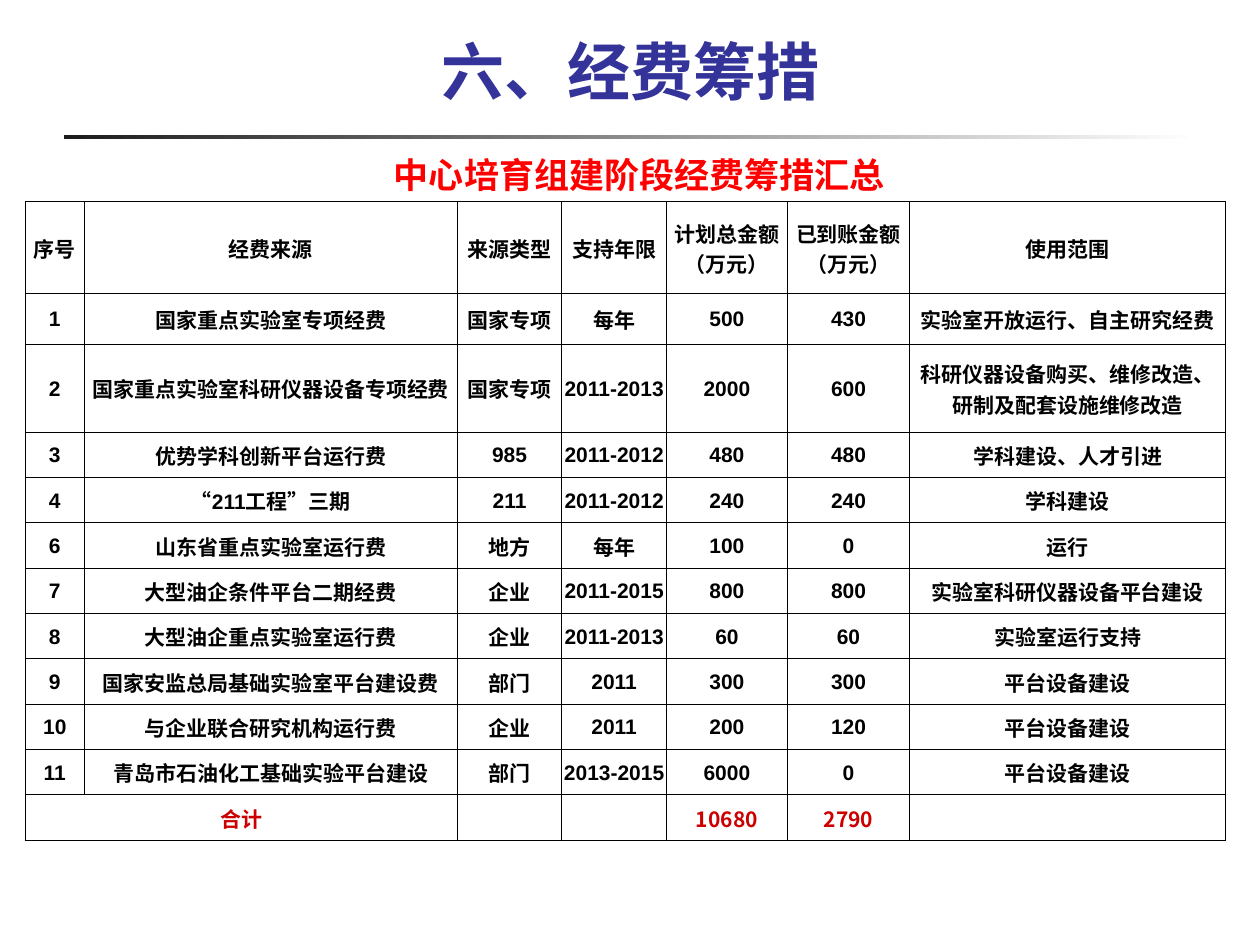
from lxml.etree import SubElement
from pptx import Presentation
from pptx.dml.color import RGBColor
from pptx.enum.shapes import MSO_SHAPE
from pptx.enum.text import MSO_ANCHOR, MSO_AUTO_SIZE, PP_ALIGN
from pptx.oxml.ns import qn
from pptx.util import Inches, Pt

NAVY = RGBColor(0x33, 0x33, 0x99)
RED = RGBColor(0xFF, 0x00, 0x00)
DARK_RED = RGBColor(0xCC, 0x00, 0x00)
BLACK = RGBColor(0x00, 0x00, 0x00)
CHARCOAL = RGBColor(0x1C, 0x1C, 0x1C)
WHITE = RGBColor(0xFF, 0xFF, 0xFF)
LATIN = "Arial"
CHINESE = "Noto Sans CJK SC"

COLUMN_WIDTHS = [0.47, 2.96, 0.83, 0.83, 0.96, 0.97, 2.51]
ROW_HEIGHTS = [0.73, 0.4, 0.7] + [0.36] * 9
FUNDING = [
    ["序号", "经费来源", "来源类型", "支持年限", "计划总金额（万元）", "已到账金额（万元）", "使用范围"],
    ["1", "国家重点实验室专项经费", "国家专项", "每年", "500", "430", "实验室开放运行、自主研究经费"],
    ["2", "国家重点实验室科研仪器设备专项经费", "国家专项", "2011-2013", "2000", "600",
     "科研仪器设备购买、维修改造、研制及配套设施维修改造"],
    ["3", "优势学科创新平台运行费", "985", "2011-2012", "480", "480", "学科建设、人才引进"],
    ["4", "“211工程”三期", "211", "2011-2012", "240", "240", "学科建设"],
    ["6", "山东省重点实验室运行费", "地方", "每年", "100", "0", "运行"],
    ["7", "大型油企条件平台二期经费", "企业", "2011-2015", "800", "800", "实验室科研仪器设备平台建设"],
    ["8", "大型油企重点实验室运行费", "企业", "2011-2013", "60", "60", "实验室运行支持"],
    ["9", "国家安监总局基础实验室平台建设费", "部门", "2011", "300", "300", "平台设备建设"],
    ["10", "与企业联合研究机构运行费", "企业", "2011", "200", "120", "平台设备建设"],
    ["11", "青岛市石油化工基础实验平台建设", "部门", "2013-2015", "6000", "0", "平台设备建设"],
    ["合计", "", "", "", "10680", "2790", ""],
]


def write_centred(frame, text, size, color, font_name=LATIN):
    frame.word_wrap = True
    paragraph = frame.paragraphs[0]
    paragraph.text = text
    paragraph.alignment = PP_ALIGN.CENTER
    font = paragraph.font
    font.name, font.size, font.bold = font_name, Pt(size), True
    font.color.rgb = color
    properties = paragraph._p.get_or_add_pPr().find(qn("a:defRPr"))
    SubElement(properties, qn("a:ea"), typeface=CHINESE)


def add_title(slide):
    title = slide.shapes.title
    title.left, title.top = Inches(0), Inches(0.23)
    title.width, title.height = Inches(10), Inches(0.68)
    frame = title.text_frame
    frame.auto_size = MSO_AUTO_SIZE.NONE
    frame.vertical_anchor = MSO_ANCHOR.BOTTOM
    write_centred(frame, "六、经费筹措", 36, NAVY)


def add_fading_rule(slide):
    rule = slide.shapes.add_shape(
        MSO_SHAPE.RECTANGLE, Inches(0.51), Inches(1.07), Inches(9), Inches(0.03))
    rule.shadow.inherit = False
    rule.line.fill.background()
    rule.fill.gradient()
    rule.fill.gradient_angle = 0
    for stop, color in zip(rule.fill.gradient_stops, (CHARCOAL, WHITE)):
        stop.color.rgb = color


def add_subtitle(slide):
    box = slide.shapes.add_textbox(Inches(2.24), Inches(1.17), Inches(5.67), Inches(0.43))
    write_centred(box.text_frame, "中心培育组建阶段经费筹措汇总", 20, RED)


def outline_cell(cell):
    properties = cell._tc.get_or_add_tcPr()
    for side in ("lnL", "lnR", "lnT", "lnB"):
        line = SubElement(properties, qn(f"a:{side}"), w=str(Pt(0.5)))
        fill = SubElement(line, qn("a:solidFill"))
        SubElement(fill, qn("a:srgbClr"), val=str(BLACK))


def fill_cell(cell, text, is_total):
    cell.margin_left = cell.margin_right = cell.margin_top = Inches(0.01)
    cell.margin_bottom = 0
    cell.vertical_anchor = MSO_ANCHOR.MIDDLE
    outline_cell(cell)
    cell.fill.background()
    starts_chinese = text[:1] >= "一"
    write_centred(cell.text_frame, text, 12, DARK_RED if is_total else BLACK,
                  CHINESE if is_total or starts_chinese else LATIN)


def add_funding_table(slide):
    table = slide.shapes.add_table(
        len(FUNDING), len(COLUMN_WIDTHS), Inches(0.2), Inches(1.6),
        Inches(sum(COLUMN_WIDTHS)), Inches(sum(ROW_HEIGHTS))).table
    table.first_row = table.horz_banding = False
    for column, width in zip(table.columns, COLUMN_WIDTHS):
        column.width = Inches(width)
    for row, height in zip(table.rows, ROW_HEIGHTS):
        row.height = Inches(height)

    total_row = len(FUNDING) - 1
    for row_index, entries in enumerate(FUNDING):
        for column_index, text in enumerate(entries):
            fill_cell(table.cell(row_index, column_index), text, row_index == total_row)
    table.cell(total_row, 0).merge(table.cell(total_row, 1))


def main():
    deck = Presentation()
    deck.slide_width, deck.slide_height = Inches(10), Inches(7.5)
    slide = deck.slides.add_slide(deck.slide_layouts[5])
    add_fading_rule(slide)
    add_title(slide)
    add_subtitle(slide)
    add_funding_table(slide)
    deck.save("out.pptx")


if __name__ == "__main__":
    main()
